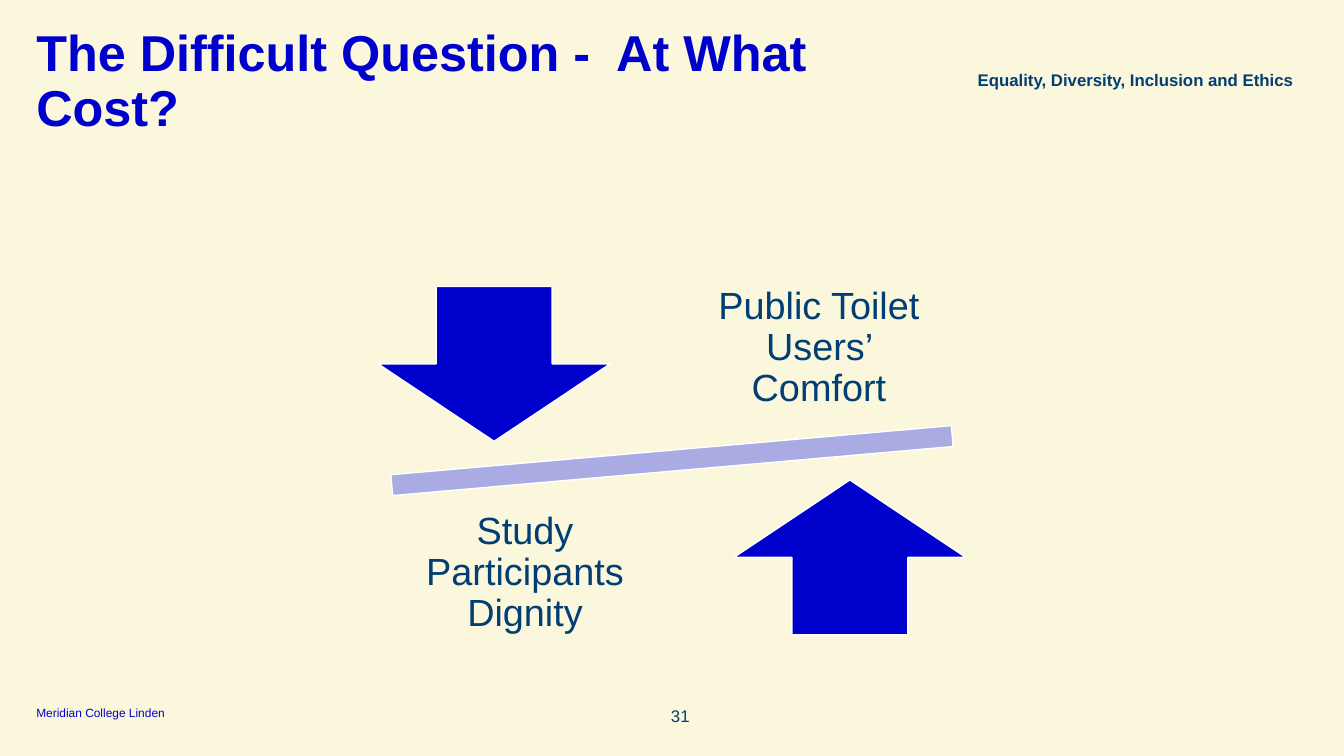
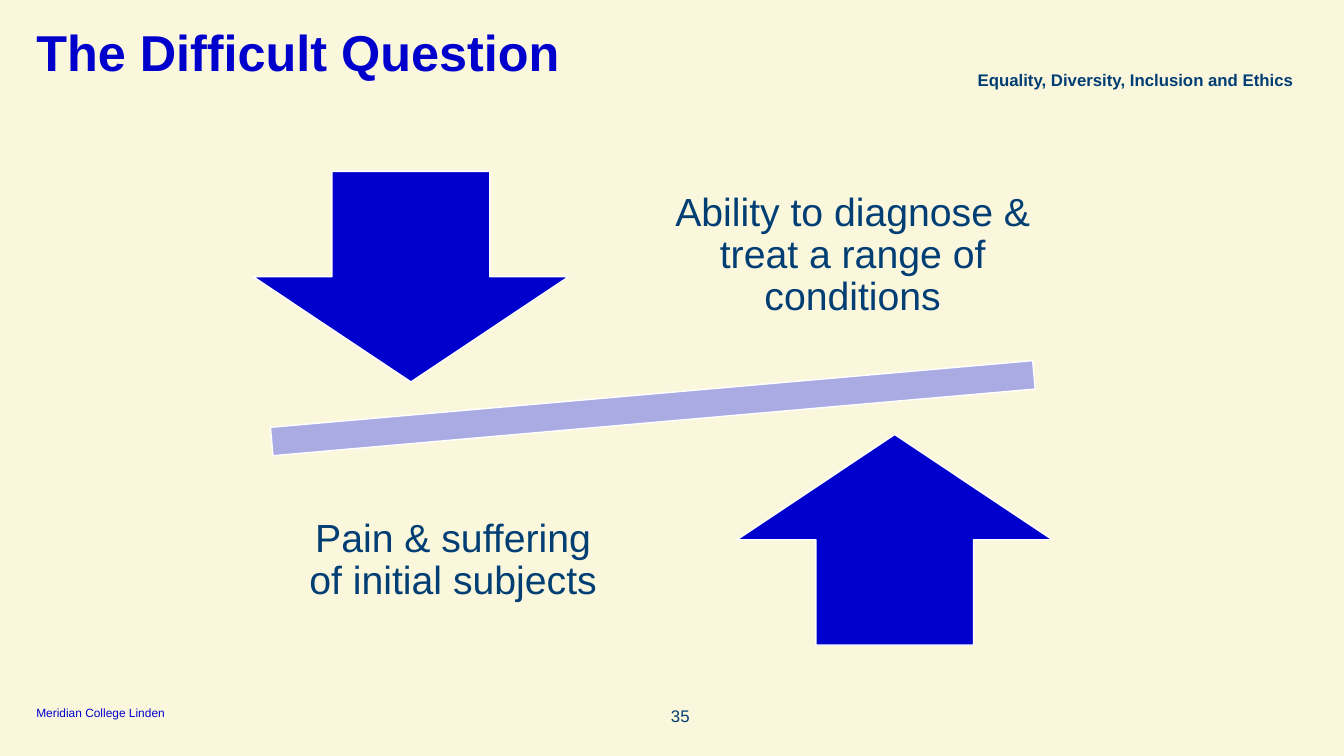
import pptx
import pptx.dml.color
import pptx.enum.shapes
import pptx.enum.text
import pptx.util

Inches = pptx.util.Inches
Pt = pptx.util.Pt
Shape = pptx.enum.shapes.MSO_SHAPE
Align = pptx.enum.text.PP_ALIGN
Anchor = pptx.enum.text.MSO_ANCHOR

COLOURS = {
    "paper": "FBF7DC",
    "blue": "0000CD",
    "lilac": "ABABE3",
    "navy": "003E74",
    "white": "FFFFFF",
}
FONT = "Arial"
COLLEGE = "Meridian College Linden"
COURSE = "Equality, Diversity, Inclusion and Ethics"


def colour(name):
    return pptx.dml.color.RGBColor.from_string(COLOURS[name])


def place(shape, left, top, width, height):
    shape.left, shape.top = Inches(left), Inches(top)
    shape.width, shape.height = Inches(width), Inches(height)


def write(shape, text, size, ink="navy", bold=False, align=Align.LEFT,
          anchor=Anchor.TOP, spacing=1.0, inset=0):
    frame = shape.text_frame
    frame.word_wrap = True
    frame.auto_size = pptx.enum.text.MSO_AUTO_SIZE.NONE
    frame.vertical_anchor = anchor
    frame.margin_left = frame.margin_right = Inches(inset)
    frame.margin_top = frame.margin_bottom = Inches(inset)
    para = frame.paragraphs[0]
    para.alignment = align
    para.line_spacing = spacing
    span = para.add_run()
    span.text = text
    span.font.name = FONT
    span.font.size = Pt(size)
    span.font.bold = bold
    span.font.color.rgb = colour(ink)


def add_text(page, box, text, size, **style):
    shape = page.shapes.add_textbox(*(Inches(length) for length in box))
    write(shape, text, size, **style)


def add_block(page, kind, box, fill):
    shape = page.shapes.add_shape(kind, *(Inches(length) for length in box))
    shape.shadow.inherit = False
    shape.fill.solid()
    shape.fill.fore_color.rgb = colour(fill)
    shape.line.color.rgb = colour("white")
    shape.line.width = Pt(1)
    return shape


def add_page(deck, title, title_width, title_height, number):
    """Add a slide with its title, footer, page number and course name."""
    page = deck.slides.add_slide(deck.slide_layouts.get_by_name("Title Only"))
    place(page.shapes.title, 0.36, 0.28, title_width, title_height)
    write(page.shapes.title, title, 36, ink="blue", bold=True, spacing=0.9)
    add_text(page, (0.36, 6.99, 1.55, 0.15), COLLEGE, 8.5, ink="blue",
             anchor=Anchor.BOTTOM)
    add_text(page, (6.49, 6.99, 0.35, 0.15), str(number), 12,
             align=Align.RIGHT, spacing=1.05)
    add_text(page, (9.41, 0.68, 3.42, 0.34), COURSE, 12, bold=True,
             align=Align.RIGHT, spacing=1.05)
    return page


def add_balance(page, box, burden, benefit, size, benefit_share=0.32):
    """Draw a tilted beam with opposed arrows, in proportion to the box."""
    left, top, width, height = box

    def part(centre, middle, wide, high):
        return (left + (centre - wide / 2) * width,
                top + (middle - high / 2) * height,
                wide * width, high * height)

    beam = add_block(page, Shape.MATH_MINUS, part(0.5, 0.5, 0.99, 0.23), "lilac")
    beam.rotation = -5
    for kind, centre, middle in ((Shape.DOWN_ARROW, 0.27, 0.25),
                                 (Shape.UP_ARROW, 0.73, 0.75)):
        add_block(page, kind, part(centre, middle, 0.3, 0.4), "blue")
    for text, centre, middle, share in ((benefit, 0.69, 0.21, benefit_share),
                                        (burden, 0.31, 0.79, 0.32)):
        add_text(page, part(centre, middle, share, 0.42), text, size,
                 align=Align.CENTER, anchor=Anchor.MIDDLE, spacing=0.9,
                 inset=size / 128)


def main():
    deck = pptx.Presentation()
    deck.slide_width, deck.slide_height = Inches(13.33), Inches(7.5)
    backdrop = deck.slide_master.background.fill
    backdrop.solid()
    backdrop.fore_color.rgb = colour("paper")

    page = add_page(deck, "The Difficult Question -  At What Cost?",
                    8.63, 0.74, 31)
    add_balance(page, (2.83, 2.65, 7.67, 3.84), "Study Participants Dignity",
                "Public Toilet Users’ Comfort", 27)

    page = add_page(deck, "The Difficult Question", 12.62, 0.41, 35)
    add_balance(page, (1.26, 1.44, 10.43, 5.22),
                "Pain & suffering of initial subjects",
                "Ability to diagnose & treat a range of conditions", 28,
                benefit_share=0.39)

    deck.save("out.pptx")


if __name__ == "__main__":
    main()
